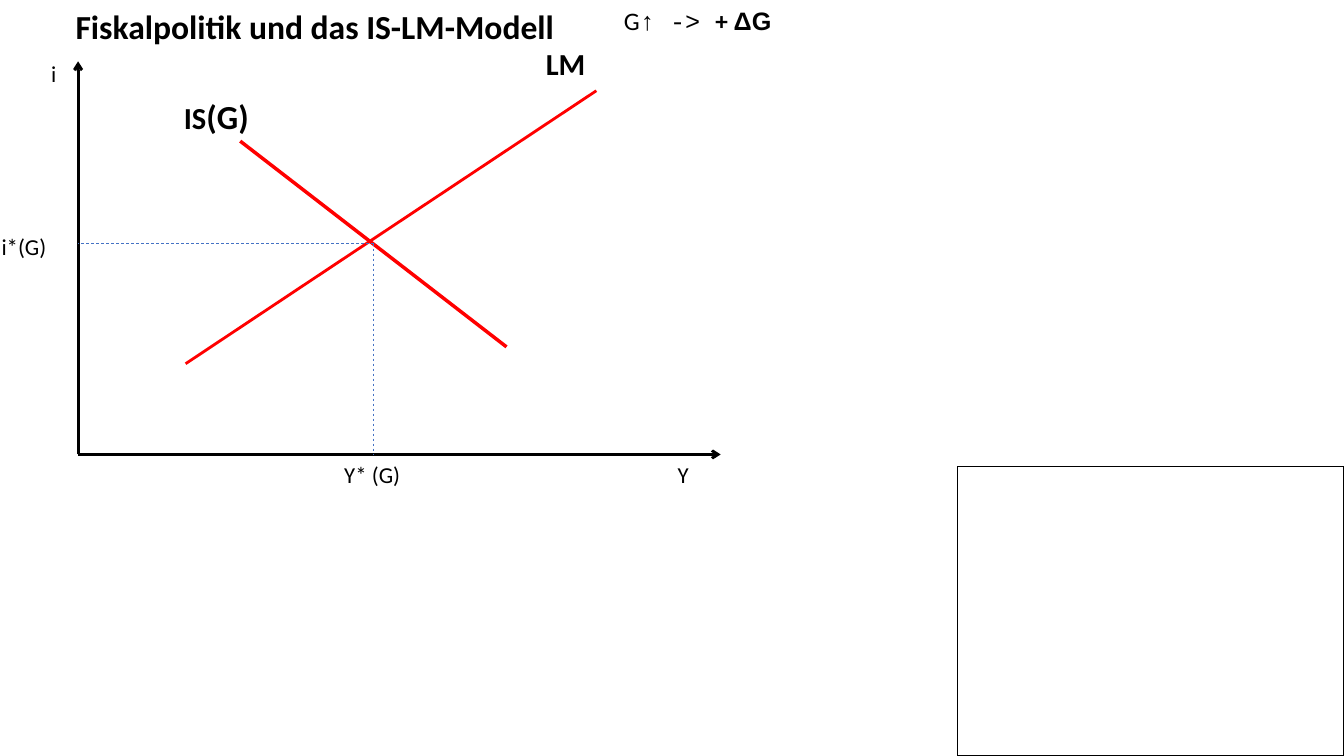
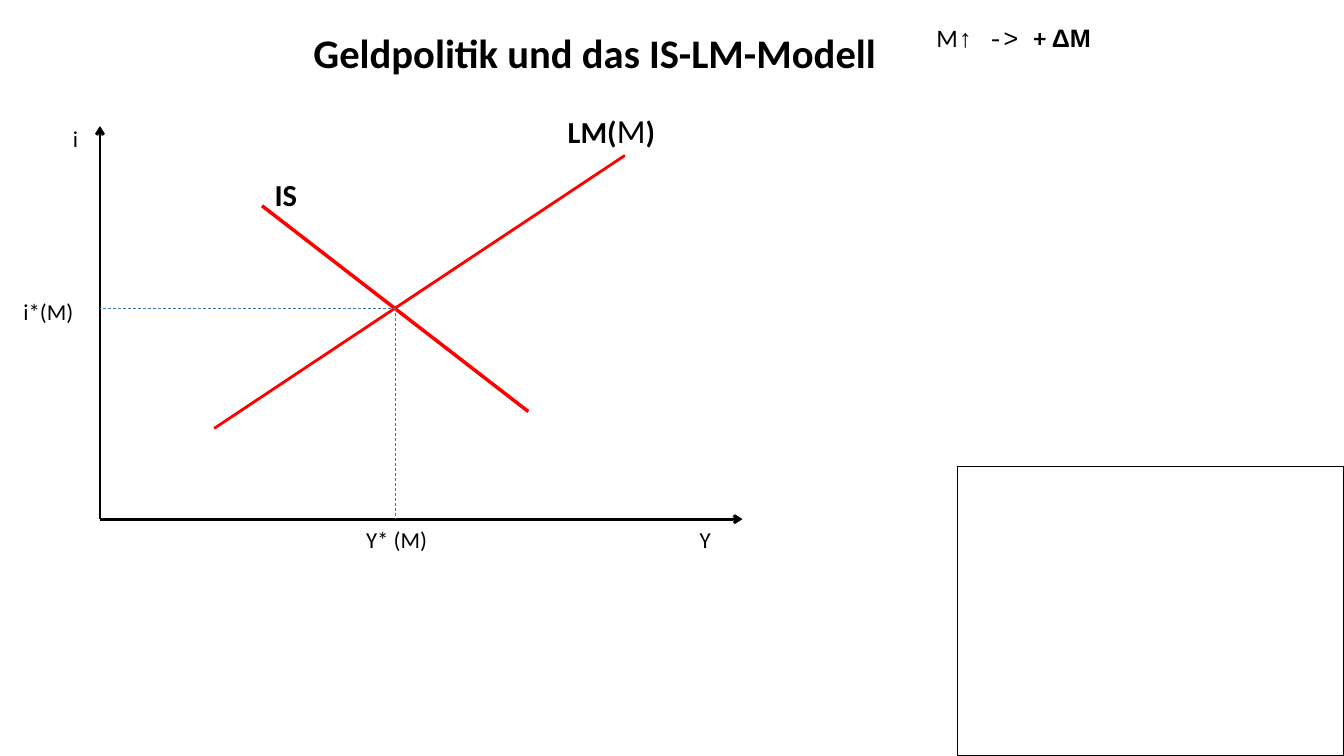
import pptx
import pptx.dml.color
import pptx.enum.dml
import pptx.enum.shapes
import pptx.enum.text
import pptx.oxml.ns
import pptx.util
import lxml.etree

COLORS = {"ink": "000000", "curve": "FF0000", "guide": "4472C4"}
COLUMNS, ROWS = 160, 90
AXIS_SIZE, CURVE_SIZE, SYMBOL_SIZE, SHOCK_SIZE = 16.3, 21.8, 24, 18


class Deck:
    """Holds the style and the current slide; lengths are grid columns and rows."""

    def __init__(self):
        self.presentation = pptx.Presentation()
        self.presentation.slide_width = pptx.util.Inches(13.333)
        self.presentation.slide_height = pptx.util.Inches(7.5)
        self.slide = None

    def add_slide(self):
        blank = self.presentation.slide_layouts[6]
        self.slide = self.presentation.slides.add_slide(blank)

    def x(self, columns):
        return round(self.presentation.slide_width * columns / COLUMNS)

    def y(self, rows):
        return round(self.presentation.slide_height * rows / ROWS)

    def box(self, left, top, width, height):
        return self.x(left), self.y(top), self.x(width), self.y(height)

    def color(self, name):
        return pptx.dml.color.RGBColor.from_string(COLORS[name])

    def text(self, area, pieces, size, bold=False, wrap=False):
        """Write one paragraph; each piece is a text and its differences in font."""
        label = self.slide.shapes.add_textbox(*self.box(*area))
        frame = label.text_frame
        frame.word_wrap = wrap
        if not wrap:
            frame.auto_size = pptx.enum.text.MSO_AUTO_SIZE.SHAPE_TO_FIT_TEXT
        paragraph = frame.paragraphs[0]
        font = paragraph.font
        font.name, font.size, font.bold = "Calibri", pptx.util.Pt(size), bold
        font.color.rgb = self.color("ink")
        for words, differences in pieces:
            run = paragraph.add_run()
            run.text = words
            for attribute, value in differences.items():
                setattr(run.font, attribute, value)
        return label

    def title(self, area, words, size):
        frame = self.text(area, [(words, {})], size, bold=True, wrap=True).text_frame
        frame.vertical_anchor = pptx.enum.text.MSO_ANCHOR.MIDDLE
        frame.paragraphs[0].alignment = pptx.enum.text.PP_ALIGN.CENTER

    def line(self, start, end, color, width, dashed=False, arrow=False):
        connector = self.slide.shapes.add_connector(
            pptx.enum.shapes.MSO_CONNECTOR.STRAIGHT,
            self.x(start[0]), self.y(start[1]), self.x(end[0]), self.y(end[1]))
        connector.line.color.rgb = self.color(color)
        connector.line.width = pptx.util.Pt(width)
        if dashed:
            connector.line.dash_style = pptx.enum.dml.MSO_LINE.DASH
        qn = pptx.oxml.ns.qn
        properties = connector.element.spPr
        if arrow:
            outline = properties.find(qn("a:ln"))
            lxml.etree.SubElement(outline, qn("a:tailEnd"), type="arrow")
        lxml.etree.SubElement(properties, qn("a:effectLst"))

    def frame(self, area):
        rectangle = self.slide.shapes.add_shape(
            pptx.enum.shapes.MSO_SHAPE.RECTANGLE, *self.box(*area))
        rectangle.shadow.inherit = False
        rectangle.fill.background()
        rectangle.line.color.rgb = self.color("ink")
        rectangle.line.width = pptx.util.Pt(1)

    def shock(self, area, variable):
        """Announce the rise of the policy variable."""
        self.text(area, [
            (variable, {}),
            ("↑ -> ", {"name": "Courier New"}),
            ("+ ", {"bold": True}),
            ("Δ" + variable, {"name": "Arial", "bold": True}),
        ], SHOCK_SIZE, wrap=True)

    def diagram(self, origin, variable, is_label, lm_label, lm_shift=0):
        """Draw the IS-LM diagram; all places count from the origin of its axes."""
        def at(column, row):
            return origin[0] + column, origin[1] + row

        def axis_label(words, column, row, width):
            self.text((*at(column, row), width, 4.6), [(words, {})], AXIS_SIZE)

        across, up = 35.2, -25.1
        for axis_end in ((0, -46.8), (76.5, 0)):
            self.line(origin, at(*axis_end), "ink", 2, arrow=True)
        axis_label("i", -4.4, -47.6, 3)
        axis_label("Y", 70.2, 0.2, 3.7)
        self.line(at(12.8 + lm_shift, -10.8), at(61.7 + lm_shift, -43.3), "curve", 2)
        self.line(at(19.3, -37.3), at(51, -12.8), "curve", 2.5)
        for (column, row, width, height), pieces in (is_label, lm_label):
            self.text((*at(column, row), width, height), pieces, CURVE_SIZE, bold=True)
        axis_label(f"Y* ({variable})", 30.5, 0.2, 10)
        axis_label(f"i*({variable})", -10.3, -27, 9)
        for foot in ((0, up), (across, 0)):
            self.line(at(across, up), at(*foot), "guide", 0.5, dashed=True)


def main():
    deck = Deck()
    symbol = {"size": pptx.util.Pt(SYMBOL_SIZE)}
    notes_area = (114, 55.5, 46, 34.5)

    deck.add_slide()
    deck.title((6.8, -0.4, 61.4, 7.1), "Fiskalpolitik und das IS-LM-Modell", 24)
    deck.diagram(
        (9.3, 54.1), "G",
        is_label=((11.4, -43.3, 10.2, 6), [("IS", {}), ("(G)", symbol)]),
        lm_label=((54.5, -49.3, 7.2, 5.6), [("LM", {})]))
    deck.shock((73.1, 0, 23.4, 8.5), "G")
    deck.frame(notes_area)

    deck.add_slide()
    deck.title((21, 1.4, 99.7, 9.7), "Geldpolitik und das IS-LM-Modell", 29)
    deck.diagram(
        (11.9, 61.8), "M",
        is_label=((19.6, -41.5, 5.2, 5.6), [("IS", {})]),
        lm_label=((54.5, -49.3, 12.8, 6),
                  [("LM(", {}), ("M", {**symbol, "bold": False}), (")", {})]),
        lm_shift=0.8)
    deck.shock((110.3, 2.1, 22.3, 8.5), "M")
    deck.frame(notes_area)

    deck.presentation.save("out.pptx")


if __name__ == "__main__":
    main()
